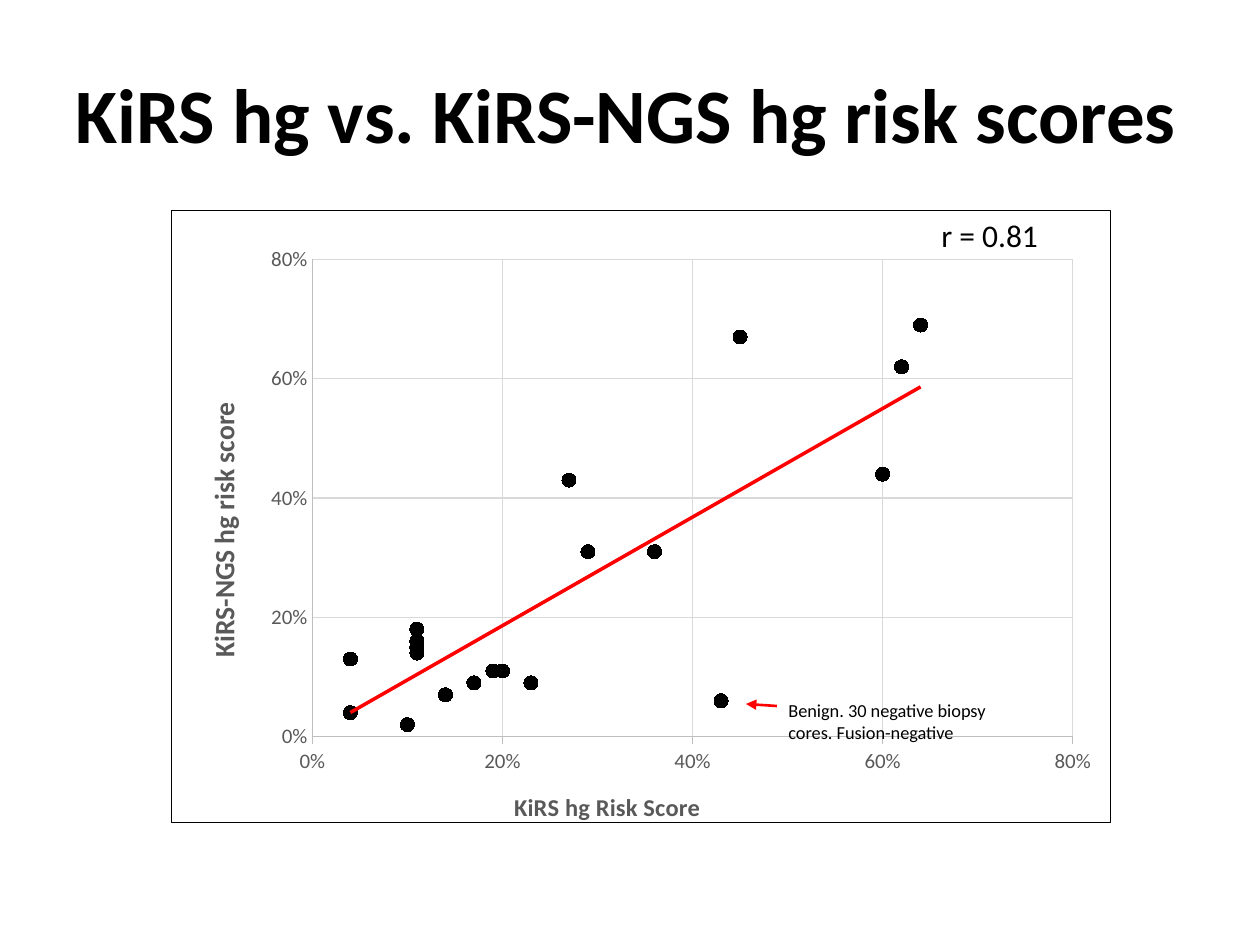
from dataclasses import dataclass

import lxml.etree
import pptx
import pptx.chart.data
import pptx.dml.color
import pptx.enum.chart
import pptx.enum.shapes
import pptx.enum.text
import pptx.oxml
import pptx.oxml.ns
import pptx.util

EMU_PER_PX = 914400 / 126
qn = pptx.oxml.ns.qn


@dataclass(frozen=True)
class Theme:
    font: str = "Calibri"
    ink: str = "000000"
    label: str = "595959"
    axis: str = "BFBFBF"
    grid: str = "D9D9D9"
    accent: str = "FF0000"
    title_size: float = 44
    result_size: float = 18
    note_size: float = 10.5
    tick_size: float = 12
    chart_size: float = 10
    x_title_size: float = 14
    y_title_size: float = 16
    thin: float = 0.75


@dataclass(frozen=True)
class Box:
    left: int
    top: int
    width: int
    height: int

    def emu(self) -> list[int]:
        return [px(v) for v in (self.left, self.top, self.width, self.height)]


@dataclass(frozen=True)
class Label:
    box: Box
    text: str
    size: float
    bold: bool = False


@dataclass(frozen=True)
class AxisStyle:
    title: str
    title_size: float
    title_x: float
    title_y: float
    rotation: int
    tick: pptx.enum.chart.XL_TICK_MARK


THEME = Theme()

# Content
LABELS = [
    Label(Box(63, 60, 1184, 106), "KiRS hg vs. KiRS-NGS hg risk scores", THEME.title_size, True),
    Label(Box(929, 210, 123, 50), "r = 0.81", THEME.result_size),
]
NOTE = Label(Box(776, 693, 232, 57),
             "Benign. 30 negative biopsy\ncores. Fusion-negative", THEME.note_size)
CHART_BOX = Box(171, 210, 940, 620)
RISK_SCORES = [
    (0.11, 0.18), (0.27, 0.43), (0.45, 0.67), (0.04, 0.13), (0.17, 0.09),
    (0.04, 0.04), (0.43, 0.06), (0.10, 0.02), (0.64, 0.69), (0.29, 0.31),
    (0.23, 0.09), (0.36, 0.31), (0.14, 0.07), (0.20, 0.11), (0.60, 0.44),
    (0.11, 0.14), (0.11, 0.16), (0.19, 0.11), (0.62, 0.62), (0.11, 0.15),
]
KIRS_AXIS = AxisStyle("KiRS hg Risk Score", THEME.x_title_size, 0.36, 0.94, 0,
                      pptx.enum.chart.XL_TICK_MARK.OUTSIDE)
NGS_AXIS = AxisStyle("KiRS-NGS hg risk score", THEME.y_title_size, 0.03, 0.31, -5400000,
                     pptx.enum.chart.XL_TICK_MARK.NONE)


def px(value: float) -> int:
    return round(value * EMU_PER_PX)


def rgb(color: str) -> pptx.dml.color.RGBColor:
    return pptx.dml.color.RGBColor.from_string(color)


def style_font(font, *, size: float, color: str, bold: bool = False) -> None:
    font.name, font.size, font.bold = THEME.font, pptx.util.Pt(size), bold
    font.color.rgb = rgb(color)


def style_line(line, color: str, width: float) -> None:
    line.color.rgb = rgb(color)
    line.width = pptx.util.Pt(width)


def add_text(slide, text: str, *, box: Box, size: float, bold: bool = False) -> None:
    frame = slide.shapes.add_textbox(*box.emu()).text_frame
    frame.word_wrap = False
    frame.auto_size = pptx.enum.text.MSO_AUTO_SIZE.SHAPE_TO_FIT_TEXT
    frame.text = text
    for paragraph in frame.paragraphs:
        for run in paragraph.runs:
            style_font(run.font, size=size, color=THEME.ink, bold=bold)


def add_label(slide, label: Label) -> None:
    add_text(slide, label.text, box=label.box, size=label.size, bold=label.bold)


def chart_xml(body: str):
    return pptx.oxml.parse_xml(body.replace(
        ">", f" {pptx.oxml.ns.nsdecls('c', 'a')}>", 1))


def outline_xml(color: str, width: float, fill: str = ""):
    return chart_xml(f'<c:spPr>{fill}<a:ln w="{pptx.util.Pt(width)}"><a:solidFill>'
                     f'<a:srgbClr val="{color}"/></a:solidFill></a:ln></c:spPr>')


def set_layout(parent, position: int, **fractions: float) -> None:
    """Place a chart part by fractions of the chart area."""
    for old in parent.findall(qn("c:layout")):
        parent.remove(old)
    target = '<c:layoutTarget val="inner"/>' if "w" in fractions else ""
    modes = "".join(f'<c:{k}Mode val="edge"/>' for k in ("x", "y"))
    values = "".join(f'<c:{k} val="{v}"/>' for k, v in fractions.items())
    parent.insert(position, chart_xml(
        f"<c:layout><c:manualLayout>{target}{modes}{values}</c:manualLayout></c:layout>"))


def style_axis(axis, style: AxisStyle) -> None:
    axis.minimum_scale, axis.maximum_scale, axis.major_unit = 0, 0.8, 0.2
    axis.major_tick_mark = style.tick
    axis.minor_tick_mark = pptx.enum.chart.XL_TICK_MARK.NONE
    axis.has_major_gridlines = True
    style_line(axis.major_gridlines.format.line, THEME.grid, THEME.thin)
    style_line(axis.format.line, THEME.axis, THEME.thin)
    axis.tick_labels.number_format = "0%"
    axis.tick_labels.number_format_is_linked = False
    style_font(axis.tick_labels.font, size=THEME.tick_size, color=THEME.label)
    frame = axis.axis_title.text_frame
    frame.text = style.title
    style_font(frame.paragraphs[0].runs[0].font, size=style.title_size,
               color=THEME.label, bold=True)
    title = axis.axis_title._element
    title.find(".//" + qn("a:bodyPr")).set("rot", str(style.rotation))
    set_layout(title, 1, x=style.title_x, y=style.title_y)


def add_scatter(slide) -> None:
    data = pptx.chart.data.XyChartData(number_format="0%")
    scores = data.add_series("Series 1")
    for kirs, ngs in RISK_SCORES:
        scores.add_data_point(kirs, ngs)
    chart = slide.shapes.add_chart(
        pptx.enum.chart.XL_CHART_TYPE.XY_SCATTER, *CHART_BOX.emu(), data).chart
    chart.has_legend = chart.has_title = False
    style_font(chart.font, size=THEME.chart_size, color=THEME.ink)
    style_axis(chart.category_axis, KIRS_AXIS)
    style_axis(chart.value_axis, NGS_AXIS)

    # Frame and plot area
    root = chart._chartSpace
    root.find(qn("c:chart")).addnext(outline_xml(THEME.ink, THEME.thin, "<a:noFill/>"))
    set_layout(root.find(".//" + qn("c:plotArea")), 0, x=0.15, y=0.08, w=0.81, h=0.78)

    # Markers and trend line
    plot = chart.plots[0]
    plot.vary_by_categories = False
    points = plot.series[0]
    points.format.line.fill.background()
    points.marker.style = pptx.enum.chart.XL_MARKER_STYLE.CIRCLE
    points.marker.size = 8
    points.marker.format.fill.solid()
    points.marker.format.fill.fore_color.rgb = rgb(THEME.ink)
    style_line(points.marker.format.line, THEME.ink, THEME.thin)
    trend = chart_xml('<c:trendline><c:trendlineType val="linear"/><c:dispRSqr val="0"/>'
                      '<c:dispEq val="0"/></c:trendline>')
    trend.insert(0, outline_xml(THEME.accent, 2))
    points._element.find(qn("c:xVal")).addprevious(trend)


def add_arrow(slide, start: tuple[int, int], end: tuple[int, int]) -> None:
    arrow = slide.shapes.add_connector(
        pptx.enum.shapes.MSO_CONNECTOR.STRAIGHT, *map(px, start + end))
    style_line(arrow.line, THEME.accent, 1.5)
    lxml.etree.SubElement(arrow.line._get_or_add_ln(), qn("a:tailEnd"), type="triangle")
    lxml.etree.SubElement(arrow._element.spPr, qn("a:effectLst"))


def main() -> None:
    deck = pptx.Presentation()
    deck.slide_width, deck.slide_height = px(1260), px(945)
    slide = deck.slides.add_slide(deck.slide_layouts[6])
    # Title and correlation, then the chart with its outlier note
    for label in LABELS:
        add_label(slide, label)
    add_scatter(slide)
    add_label(slide, NOTE)
    add_arrow(slide, (777, 706), (746, 704))
    deck.save("out.pptx")


if __name__ == "__main__":
    main()
